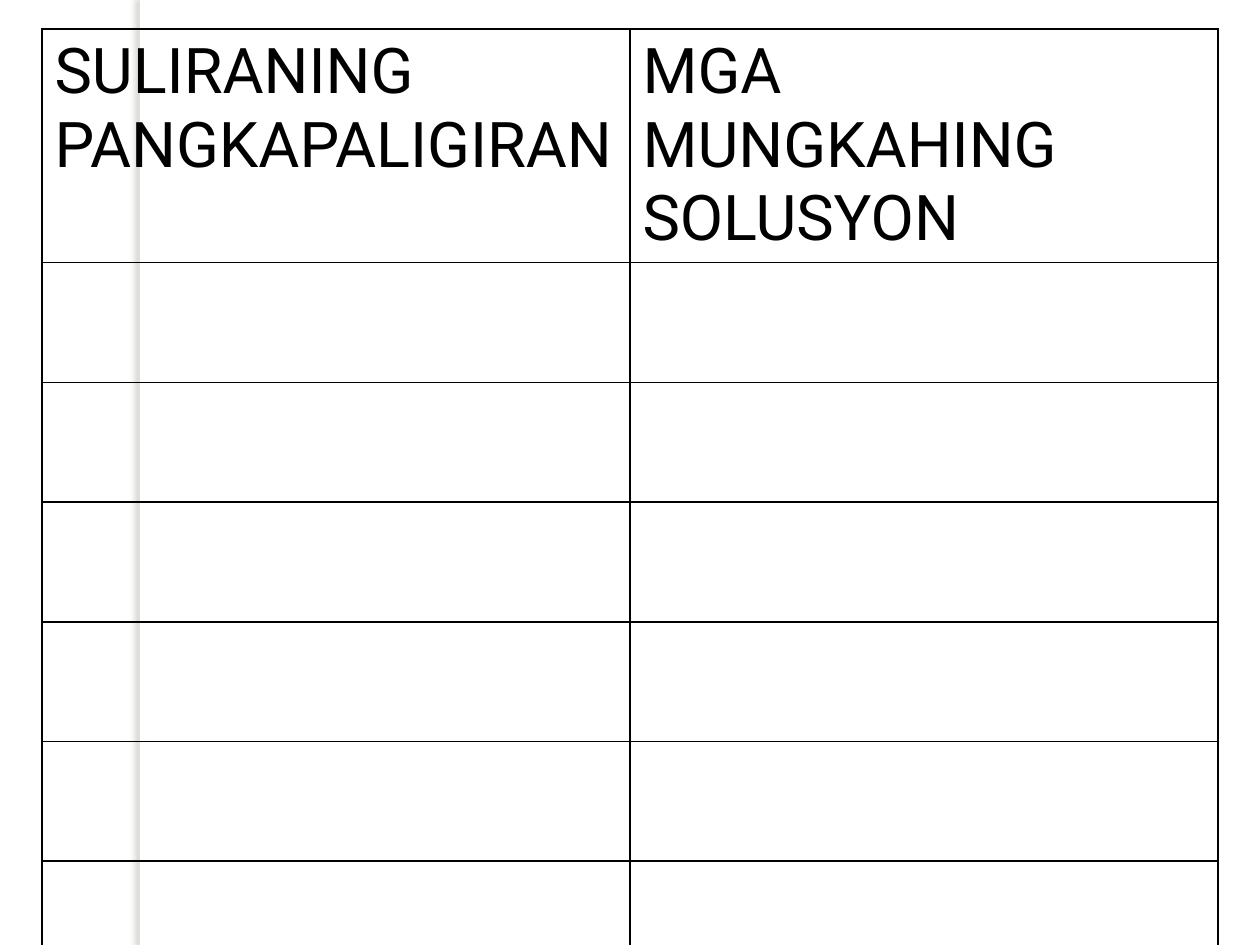
"""Build a slide with a blank table of environmental problems and proposed solutions."""
from lxml import etree
from pptx import Presentation
from pptx.dml.color import RGBColor
from pptx.enum import shapes
from pptx.oxml import ns
from pptx.util import Pt

HEADINGS = ["SULIRANING PANGKAPALIGIRAN", "MGA MUNGKAHING SOLUSYON"]
BLANK_ROWS = 6
LEFT, TOP, COLUMN_WIDTH = 24, 16.5, 336
HEADING_HEIGHT, BLANK_HEIGHT = 92.16, 68.4
STRIP = {"left": 80, "top": 0, "width": 5.76, "height": 540}
SHADOW = {"color": "736F63", "opacity": 25, "blur": 3, "distance": 3, "angle": 180}
BLACK, WHITE = "000000", "FFFFFF"


def rgb(value):
    return RGBColor.from_string(value)


def write(frame, content, size=36, font="Roboto", color=BLACK):
    run = frame.paragraphs[0].add_run()
    run.text = content
    run.font.size, run.font.name = Pt(size), font
    run.font.color.rgb = rgb(color)


def add_color(parent, value):
    fill = etree.SubElement(parent, ns.qn("a:solidFill"))
    etree.SubElement(fill, ns.qn("a:srgbClr"), val=value)


def add_borders(cell, color=BLACK, width=1):
    properties = cell._tc.get_or_add_tcPr()
    for position, side in enumerate("LRTB"):
        border = etree.Element(ns.qn(f"a:ln{side}"), w=str(Pt(width)))
        add_color(border, color)
        properties.insert(position, border)


def add_shadow(shape, color, opacity, blur, distance, angle):
    shape.shadow.inherit = False
    effects = shape._element.spPr.find(ns.qn("a:effectLst"))
    shadow = etree.SubElement(
        effects, ns.qn("a:outerShdw"), blurRad=str(Pt(blur)),
        dist=str(Pt(distance)), dir=str(angle * 60000), rotWithShape="0")
    tint = etree.SubElement(shadow, ns.qn("a:srgbClr"), val=color)
    etree.SubElement(tint, ns.qn("a:alpha"), val=str(opacity * 1000))


def add_strip(slide):
    strip = slide.shapes.add_shape(
        shapes.MSO_SHAPE.RECTANGLE, *(Pt(length) for length in STRIP.values()))
    strip.fill.solid()
    strip.fill.fore_color.rgb = rgb(WHITE)
    strip.line.fill.background()
    add_shadow(strip, **SHADOW)


def add_worksheet(slide):
    heights = [HEADING_HEIGHT] + [BLANK_HEIGHT] * BLANK_ROWS
    worksheet = slide.shapes.add_table(
        len(heights), len(HEADINGS), Pt(LEFT), Pt(TOP),
        Pt(COLUMN_WIDTH * len(HEADINGS)), Pt(sum(heights))).table
    worksheet.first_row = worksheet.horz_banding = False
    for column in worksheet.columns:
        column.width = Pt(COLUMN_WIDTH)
    for row, height in zip(worksheet.rows, heights):
        row.height = Pt(height)
    for cell in worksheet.iter_cells():
        cell.fill.background()
        add_borders(cell)
    for cell, heading in zip(worksheet.rows[0].cells, HEADINGS):
        write(cell.text_frame, heading)


def main():
    deck = Presentation()
    deck.slide_width, deck.slide_height = Pt(720), Pt(540)
    slide = deck.slides.add_slide(deck.slide_layouts[6])
    slide.background.fill.solid()
    slide.background.fill.fore_color.rgb = rgb(WHITE)
    add_strip(slide)
    add_worksheet(slide)
    deck.save("out.pptx")


if __name__ == "__main__":
    main()
